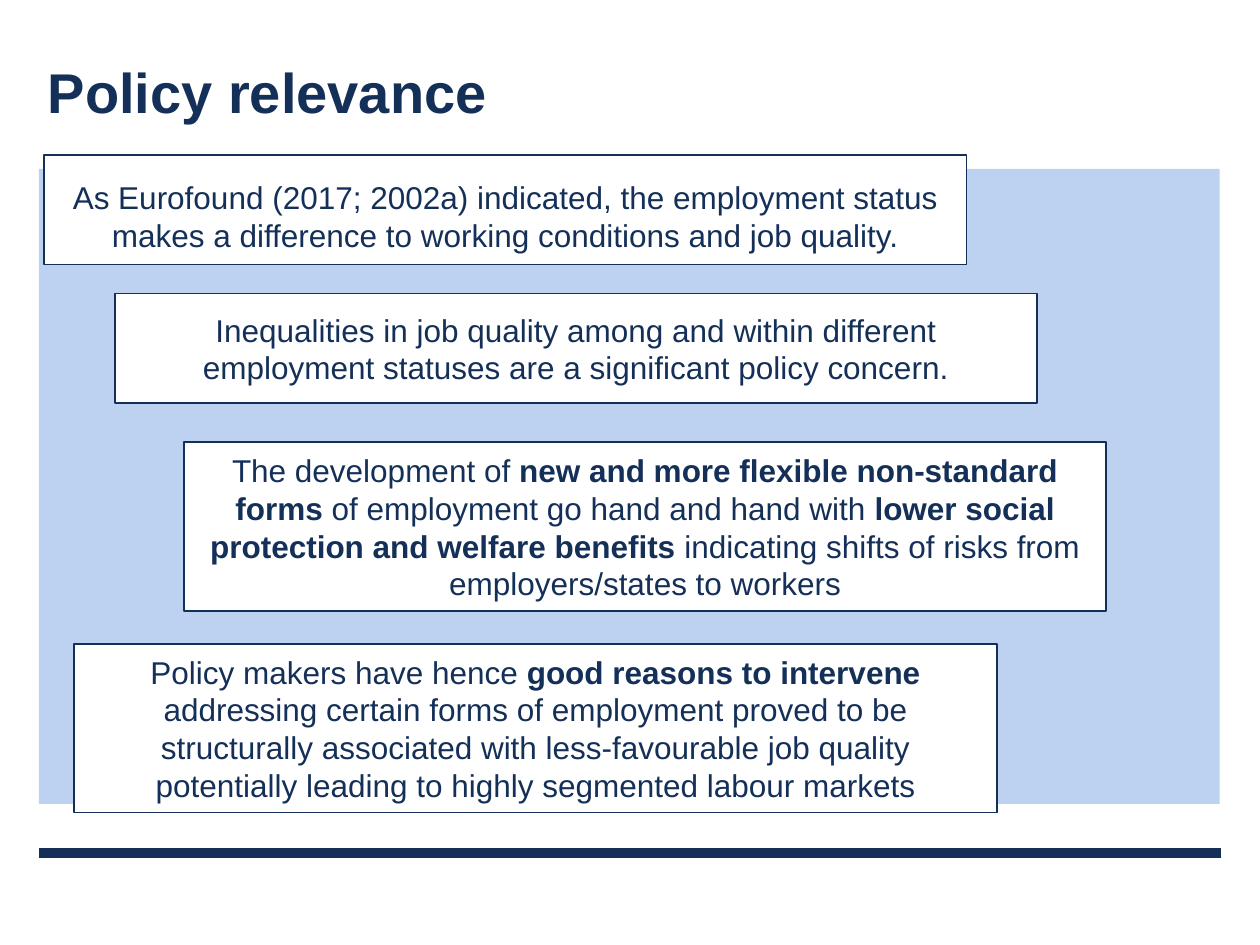
from lxml import etree
from pptx import Presentation
from pptx.dml.color import RGBColor
from pptx.enum.shapes import MSO_CONNECTOR, MSO_SHAPE
from pptx.enum.text import MSO_ANCHOR, PP_ALIGN
from pptx.oxml.ns import qn
from pptx.util import Inches, Pt

RECTANGLE = MSO_SHAPE.RECTANGLE
STRAIGHT = MSO_CONNECTOR.STRAIGHT
MIDDLE = MSO_ANCHOR.MIDDLE
LEFT, CENTER = PP_ALIGN.LEFT, PP_ALIGN.CENTER

TITLE = "Policy relevance"
FONT = "Arial"
COLORS = {"navy": "143058", "panel": "BDD2F0", "white": "FFFFFF"}
BOX_WIDTH = 7.32
SHORT, TALL = 0.87, 1.34

# left, top, height, top inset, spans of (text, bold)
STATEMENTS = [
    (0.35, 1.23, SHORT, 0.15, [
        ("As Eurofound (2017; 2002a) indicated, the employment status makes "
         "a difference to working conditions and job quality.", False),
    ]),
    (0.91, 2.33, SHORT, 0.05, [
        ("Inequalities in job quality among and within different employment "
         "statuses are a significant policy concern.", False),
    ]),
    (1.46, 3.51, TALL, 0.05, [
        ("The development of ", False),
        ("new and more flexible non-standard forms ", True),
        ("of employment go hand and hand with ", False),
        ("lower social protection and welfare benefits ", True),
        ("indicating shifts of risks from employers/states to workers", False),
    ]),
    (0.59, 5.11, TALL, 0.05, [
        ("Policy makers have hence ", False),
        ("good reasons to intervene ", True),
        ("addressing certain forms of employment proved to be structurally "
         "associated with less-favourable job quality potentially leading to "
         "highly segmented labour markets", False),
    ]),
]


def color(name):
    return RGBColor.from_string(COLORS[name])


def style_font(font, size):
    font.name = FONT
    font.size = Pt(size)
    font.color.rgb = color("navy")


def add_rectangle(slide, left, top, width, height, fill, line=None):
    box = slide.shapes.add_shape(
        RECTANGLE, Inches(left), Inches(top), Inches(width), Inches(height))
    box.shadow.inherit = False
    box.fill.solid()
    box.fill.fore_color.rgb = color(fill)
    if line:
        box.line.color.rgb = color(line)
        box.line.width = Pt(1)
    else:
        box.line.fill.background()
    return box


def add_rule(slide):
    rule = slide.shapes.add_connector(
        STRAIGHT, Inches(0.31), Inches(6.77), Inches(9.69), Inches(6.77))
    rule.line.color.rgb = color("navy")
    rule.line.width = Pt(6)
    etree.SubElement(rule._element.spPr, qn("a:effectLst"))


def format_title(title):
    title.left, title.top = Inches(0.28), Inches(0.3)
    title.width, title.height = Inches(9.37), Inches(0.85)
    title.text_frame.text = TITLE
    title.text_frame.vertical_anchor = MIDDLE
    para = title.text_frame.paragraphs[0]
    para.alignment = LEFT
    style_font(para.font, 32)
    para.font.bold = True


def add_statement(slide, left, top, height, inset, spans):
    box = add_rectangle(slide, left, top, BOX_WIDTH, height, "white", "navy")
    frame = box.text_frame
    frame.word_wrap = True
    frame.vertical_anchor = MIDDLE
    frame.margin_top = Inches(inset)
    para = frame.paragraphs[0]
    para.alignment = CENTER
    style_font(para.font, 18)
    for text, bold in spans:
        span = para.add_run()
        span.text = text
        span.font.bold = bold


def main():
    deck = Presentation()
    deck.slide_width, deck.slide_height = Inches(10), Inches(7.5)
    slide = deck.slides.add_slide(deck.slide_layouts[5])
    add_rule(slide)
    add_rectangle(slide, 0.31, 1.34, 9.37, 5.04, "panel")
    format_title(slide.shapes.title)
    for statement in STATEMENTS:
        add_statement(slide, *statement)
    deck.save("out.pptx")


if __name__ == "__main__":
    main()
